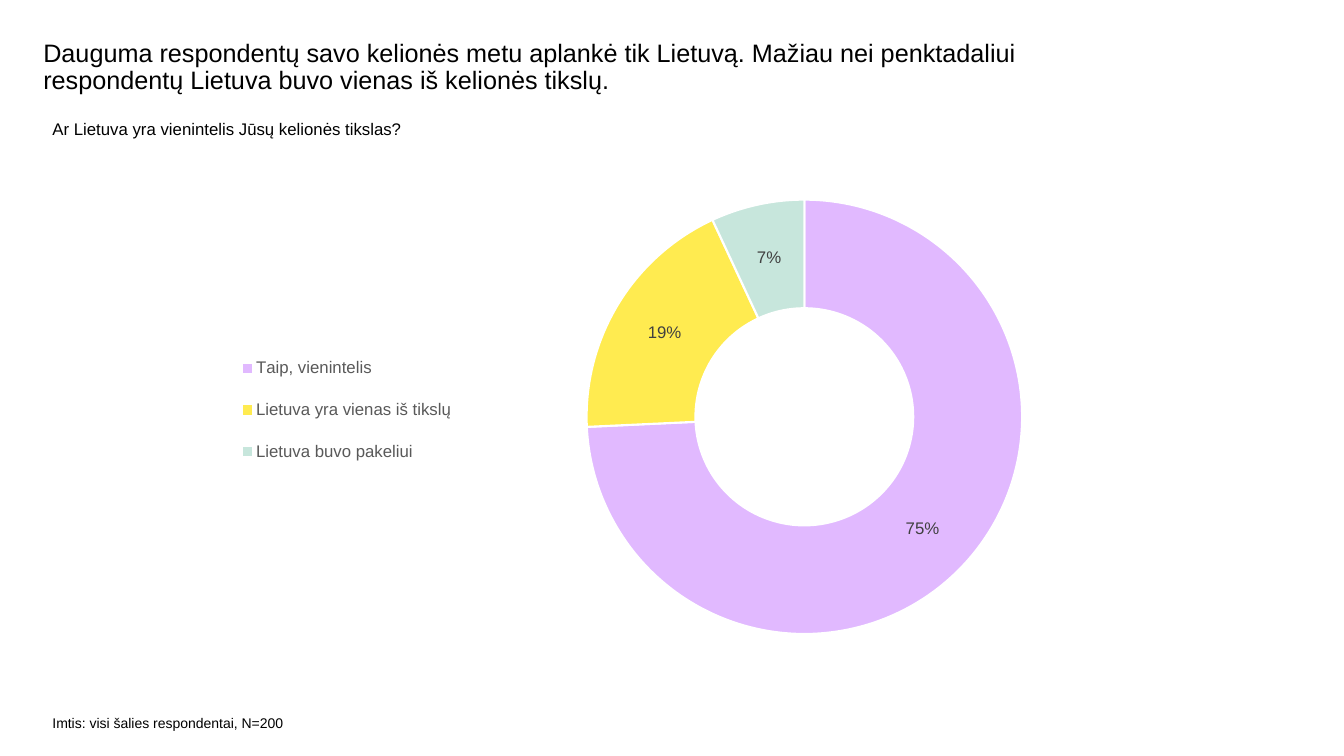
from lxml import etree
from pptx import Presentation
from pptx.chart.data import CategoryChartData
from pptx.dml.color import RGBColor
from pptx.enum.chart import XL_CHART_TYPE, XL_LEGEND_POSITION
from pptx.oxml import parse_xml
from pptx.oxml.ns import nsdecls
from pptx.util import Inches, Pt

BLACK = RGBColor(0x00, 0x00, 0x00)
WHITE = RGBColor(0xFF, 0xFF, 0xFF)
GREY = RGBColor(0x59, 0x59, 0x59)
DARK = RGBColor(0x40, 0x40, 0x40)
LILAC = RGBColor(0xE1, 0xB9, 0xFF)
YELLOW = RGBColor(0xFF, 0xEB, 0x50)
MINT = RGBColor(0xC7, 0xE6, 0xDC)


def set_font(font, size, color):
    font.name = "Arial"
    font.size = Pt(size)
    font.color.rgb = color


def make_layout(left, top, width, height, inner=False):
    """Return a manual chart layout in fractions of the chart frame."""
    target = '<c:layoutTarget val="inner"/>' if inner else ""
    return parse_xml(
        f'<c:layout {nsdecls("c")}><c:manualLayout>{target}'
        '<c:xMode val="edge"/><c:yMode val="edge"/>'
        f'<c:x val="{left}"/><c:y val="{top}"/>'
        f'<c:w val="{width}"/><c:h val="{height}"/>'
        '</c:manualLayout></c:layout>')


prs = Presentation()
prs.slide_width = Inches(13.33)
prs.slide_height = Inches(7.5)
slide = prs.slides.add_slide(prs.slide_layouts[6])

# Title, question and sample note
texts = [
    ("Dauguma respondentų savo kelionės metu aplankė tik Lietuvą. "
     "Mažiau nei penktadaliui respondentų Lietuva buvo vienas iš kelionės tikslų.",
     (0.43, 0.4, 10.97, 0.6), 18, 0.9),
    ("Ar Lietuva yra vienintelis Jūsų kelionės tikslas?",
     (0.52, 1.18, 11.89, 0.61), 12, 1.0),
    ("Imtis: visi šalies respondentai, N=200",
     (0.52, 7.09, 2.53, 0.24), 10, 1.0),
]
for text, place, size, spacing in texts:
    frame = slide.shapes.add_textbox(*map(Inches, place)).text_frame
    frame.word_wrap = True
    frame.margin_left = frame.margin_right = 0
    frame.margin_top = frame.margin_bottom = 0
    para = frame.paragraphs[0]
    para.text = text
    para.line_spacing = spacing
    set_font(para.font, size, BLACK)

# Doughnut of answers
answers = [
    ("Taip, vienintelis", 0.75, LILAC),
    ("Lietuva yra vienas iš tikslų", 0.19, YELLOW),
    ("Lietuva buvo pakeliui", 0.07, MINT),
]
data = CategoryChartData(number_format="0%")
data.categories = [name for name, share, color in answers]
data.add_series("Series 1", [share for name, share, color in answers])
chart = slide.shapes.add_chart(
    XL_CHART_TYPE.DOUGHNUT, Inches(1.78), Inches(1.97),
    Inches(8.73), Inches(4.5), data).chart
chart.has_title = False
set_font(chart.font, 10, BLACK)

plot = chart.plots[0]
plot.vary_by_categories = True
for hole in plot._element.xpath("c:holeSize"):
    hole.set("val", "50")
for index, (name, share, color) in enumerate(answers):
    slice_format = plot.series[0].points[index].format
    slice_format.fill.solid()
    slice_format.fill.fore_color.rgb = color
    slice_format.line.color.rgb = WHITE
    slice_format.line.width = Pt(1.5)

plot.has_data_labels = True
labels = plot.data_labels
labels.show_value = True
labels.show_percentage = False
labels.number_format = "0%"
labels.number_format_is_linked = False
set_font(labels.font, 12, DARK)

chart.has_legend = True
legend = chart.legend
legend.position = XL_LEGEND_POSITION.BOTTOM
legend.include_in_layout = False
set_font(legend.font, 12, GREY)

# Legend on the left, ring on the right
area = chart._chartSpace.chart.plotArea
for old in area.xpath("c:layout"):
    area.remove(old)
area.insert(0, make_layout(0.46, 0, 0.5, 0.96, inner=True))
for old in legend._element.xpath("c:layout"):
    legend._element.remove(old)
legend._element.xpath("c:legendPos")[0].addnext(make_layout(0.06, 0.3, 0.26, 0.33))

prs.save("out.pptx")
